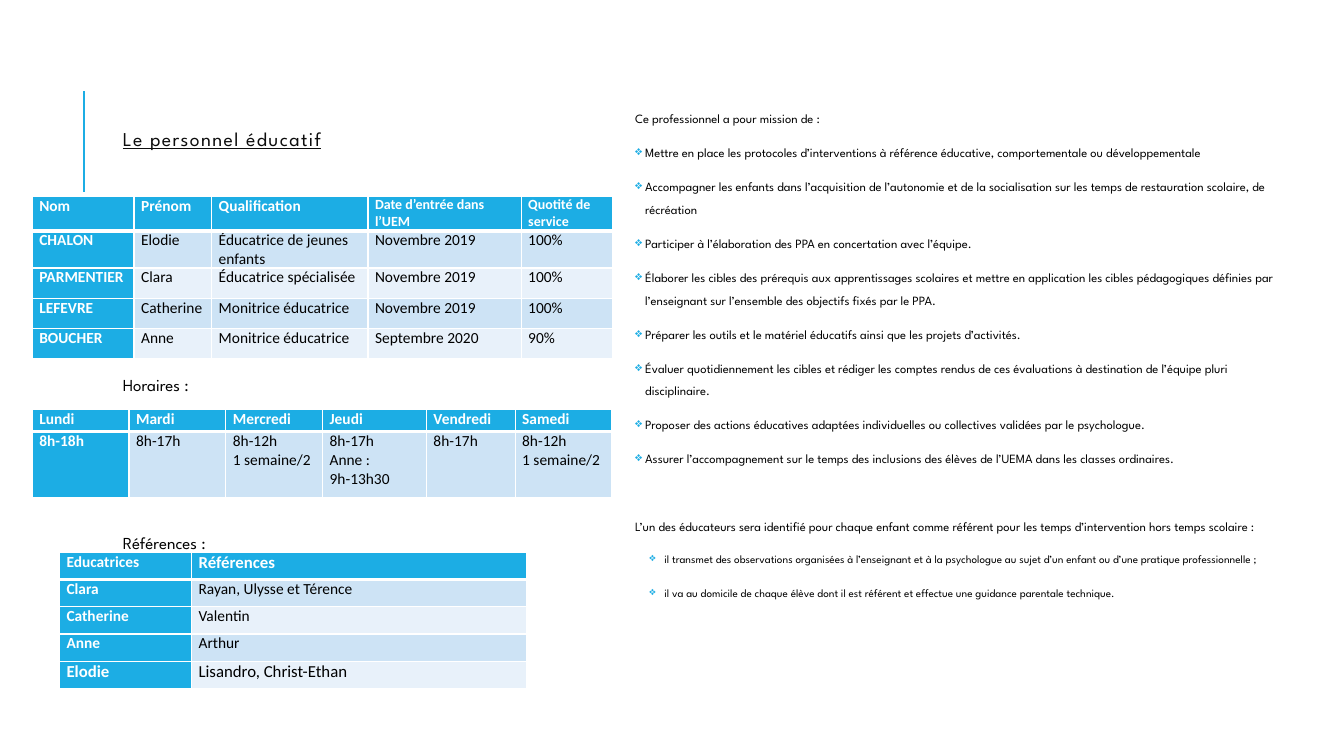
from lxml.etree import SubElement
from pptx import Presentation
from pptx.dml.color import RGBColor
from pptx.enum.shapes import MSO_CONNECTOR
from pptx.enum.text import MSO_ANCHOR
from pptx.oxml.ns import qn
from pptx.util import Inches, Pt

COLORS = {
    "accent": "1CADE4",
    "band": "CDE3F5",
    "light_band": "E8F1FA",
    "white": "FFFFFF",
    "black": "000000",
    "title": "0D0D0D",
}
HEADING_FONT = "League Spartan"
TABLE_FONT = "Calibri"

STAFF = [
    ["Nom", "Prénom", "Qualification", "Date d’entrée dans l’UEM", "Quotité de service"],
    ["CHALON", "Elodie", "Éducatrice de jeunes enfants", "Novembre 2019", "100%"],
    ["PARMENTIER", "Clara", "Éducatrice spécialisée", "Novembre 2019", "100%"],
    ["LEFEVRE", "Catherine", "Monitrice éducatrice", "Novembre 2019", "100%"],
    ["BOUCHER", "Anne", "Monitrice éducatrice", "Septembre 2020", "90%"],
]
SCHEDULE = [
    ["Lundi", "Mardi", "Mercredi", "Jeudi", "Vendredi", "Samedi"],
    ["8h-18h", "8h-17h", "8h-12h\n1 semaine/2", "8h-17h\nAnne : 9h-13h30", "8h-17h",
     "8h-12h\n1 semaine/2"],
]
REFERENCES = [
    ["Educatrices", "Références"],
    ["Clara", "Rayan, Ulysse et Térence"],
    ["Catherine", "Valentin"],
    ["Anne", "Arthur"],
    ["Elodie", "Lisandro, Christ-Ethan"],
]
MISSIONS = [
    "Mettre en place les protocoles d’interventions à référence éducative, comportementale ou développementale",
    "Accompagner les enfants dans l’acquisition de l’autonomie et de la socialisation sur les temps de restauration scolaire, de récréation",
    "Participer à l’élaboration des PPA en concertation avec l’équipe.",
    "Élaborer les cibles des prérequis aux apprentissages scolaires et mettre en application les cibles pédagogiques définies par l’enseignant sur l’ensemble des objectifs fixés par le PPA.",
    "Préparer les outils et le matériel éducatifs ainsi que les projets d’activités.",
    "Évaluer quotidiennement les cibles et rédiger les comptes rendus de ces évaluations à destination de l’équipe pluri disciplinaire.",
    "Proposer des actions éducatives adaptées individuelles ou collectives validées par le psychologue.",
    "Assurer l’accompagnement sur le temps des inclusions des élèves de l’UEMA dans les classes ordinaires.",
]
REFERENT_DUTIES = [
    "il transmet des observations organisées à l’enseignant et à la psychologue au sujet d’un enfant ou d’une pratique professionnelle ;",
    "il va au domicile de chaque élève dont il est référent et effectue une guidance parentale technique.",
]


def rgb(name):
    return RGBColor.from_string(COLORS[name])


def add_solid_fill(parent, color):
    fill = SubElement(parent, qn("a:solidFill"))
    SubElement(fill, qn("a:srgbClr"), val=COLORS[color])


def add_bullet(paragraph, margin, hanging):
    properties = paragraph._p.get_or_add_pPr()
    properties.set("marL", str(Inches(margin)))
    properties.set("indent", str(-Inches(hanging)))
    add_solid_fill(SubElement(properties, qn("a:buClr")), "accent")
    color = properties.find(qn("a:buClr"))
    solid = color[0]
    color.append(solid[0])
    color.remove(solid)
    SubElement(properties, qn("a:buChar"), char="❖")


def write_text(frame, text, size=9, font=HEADING_FONT, color="black", bold=False,
               underline=False, tracking=0, spacing=None, before=0, after=0,
               bullet=None, level=0):
    for line in text.split("\n"):
        paragraph = frame.paragraphs[0]
        if paragraph.runs:
            paragraph = frame.add_paragraph()
        paragraph.level = level
        paragraph.line_spacing = spacing
        paragraph.space_before = Pt(before)
        paragraph.space_after = Pt(after)
        if bullet:
            add_bullet(paragraph, *bullet)
        run = paragraph.add_run()
        run.text = line
        run.font.size = Pt(size)
        run.font.name = font
        run.font.bold = bold
        run.font.underline = underline
        run.font.color.rgb = rgb(color)
        if tracking:
            run._r.get_or_add_rPr().set("spc", str(tracking * 100))


def add_text_box(slide, left, top, width, height, inset=0.1, anchor=MSO_ANCHOR.MIDDLE):
    box = slide.shapes.add_textbox(Inches(left), Inches(top), Inches(width), Inches(height))
    frame = box.text_frame
    frame.word_wrap = True
    frame.vertical_anchor = anchor
    frame.margin_left = frame.margin_right = Inches(inset)
    frame.margin_top = frame.margin_bottom = Inches(0.05)
    return frame


def add_accent_line(slide, x, top, bottom):
    line = slide.shapes.add_connector(
        MSO_CONNECTOR.STRAIGHT, Inches(x), Inches(bottom), Inches(x), Inches(top))
    line.line.color.rgb = rgb("accent")
    line.line.width = Pt(1.5)
    SubElement(line._element.spPr, qn("a:effectLst"))


def set_borders(cell, bottom):
    properties = cell._tc.get_or_add_tcPr()
    for side, width in (("lnL", 1), ("lnR", 1), ("lnT", 1), ("lnB", bottom)):
        border = SubElement(properties, qn(f"a:{side}"), w=str(Pt(width)))
        add_solid_fill(border, "white")


def add_table(slide, rows, left, top, widths, heights, sizes=None, after=0):
    sizes = sizes or {}
    table = slide.shapes.add_table(
        len(rows), len(widths), Inches(left), Inches(top),
        Inches(sum(widths)), Inches(sum(heights))).table
    for column, width in zip(table.columns, widths):
        column.width = Inches(width)
    for r, (values, height) in enumerate(zip(rows, heights)):
        table.rows[r].height = Inches(height)
        for c, value in enumerate(values):
            cell = table.cell(r, c)
            heading = r == 0 or c == 0
            cell.margin_left = cell.margin_right = Inches(0.07)
            cell.margin_top = cell.margin_bottom = 0
            set_borders(cell, 3 if r == 0 else 1)
            cell.fill.solid()
            cell.fill.fore_color.rgb = rgb(
                "accent" if heading else "band" if r % 2 else "light_band")
            write_text(cell.text_frame, value, size=sizes.get((r, c), 11), font=TABLE_FONT,
                       color="white" if heading else "black", bold=heading, after=after)


def add_missions(slide):
    frame = add_text_box(slide, 6.25, 0.98, 6.53, 5.83, inset=0.05, anchor=MSO_ANCHOR.TOP)
    write_text(frame, "Ce professionnel a pour mission de :", spacing=1.5, after=2)
    for mission in MISSIONS:
        write_text(frame, mission, spacing=1.5, before=6, after=2, bullet=(0.1, 0.1))
    write_text(frame, "L’un des éducateurs sera identifié pour chaque enfant comme référent "
               "pour les temps d’intervention hors temps scolaire :",
               spacing=1.5, before=30, after=2)
    for duty in REFERENT_DUTIES:
        write_text(frame, duty, size=8, spacing=1.5, before=6, after=4,
                   bullet=(0.29, 0.15), level=1)


def main():
    presentation = Presentation()
    presentation.slide_width = Inches(13.33)
    presentation.slide_height = Inches(7.5)
    slide = presentation.slides.add_slide(presentation.slide_layouts[6])

    add_accent_line(slide, 0.83, 0.9, 1.9)
    write_text(add_text_box(slide, 1.12, 0.9, 4.8, 1), "Le personnel éducatif", size=14,
               color="title", underline=True, tracking=1, spacing=0.8)
    add_missions(slide)
    for label, top in (("Horaires :", 3.66), ("Références :", 5.23)):
        write_text(add_text_box(slide, 1.12, top, 4.8, 0.3), label, size=12, spacing=1.08)

    add_table(slide, STAFF, 0.32, 1.95, [1.01, 0.77, 1.55, 1.52, 0.91],
              [0.34, 0.37, 0.3, 0.3, 0.3], sizes={(0, 3): 10, (0, 4): 10}, after=6)
    add_table(slide, SCHEDULE, 0.32, 4.06, [0.96, 0.96, 0.96, 1.03, 0.88, 0.96], [0.22, 0.66])
    add_table(slide, REFERENCES, 0.59, 5.48, [1.31, 3.32], [0.27] * 5,
              sizes={(0, 1): 12, (4, 0): 12, (4, 1): 12})
    presentation.save("out.pptx")


if __name__ == "__main__":
    main()
